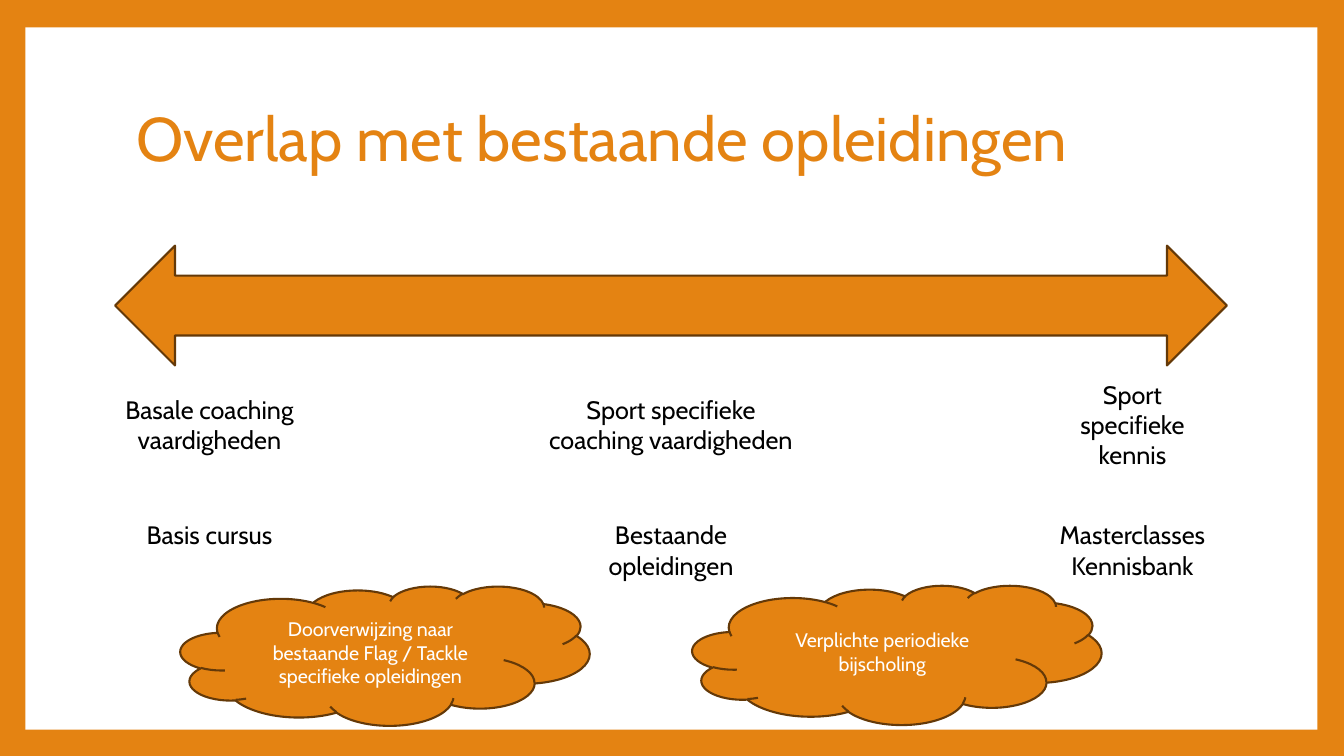
import pptx
import pptx.util
import pptx.dml.color
import pptx.enum.shapes
import pptx.enum.text

Cm = pptx.util.Cm
Pt = pptx.util.Pt
RGBColor = pptx.dml.color.RGBColor
Shape = pptx.enum.shapes.MSO_SHAPE
Align = pptx.enum.text.PP_ALIGN

ORANGE = RGBColor(0xE4, 0x83, 0x12)
BROWN = RGBColor(0x64, 0x39, 0x08)
WHITE = RGBColor(0xFF, 0xFF, 0xFF)
BLACK = RGBColor(0, 0, 0)


def write(shape, text, size, color, align=Align.CENTER):
    frame = shape.text_frame
    frame.word_wrap = True
    frame.vertical_anchor = pptx.enum.text.MSO_ANCHOR.MIDDLE
    frame.text = text
    for par in frame.paragraphs:
        par.alignment = align
        for run in par.runs:
            run.font.name = "Cabin"
            run.font.size = Pt(size)
            run.font.color.rgb = color


def draw(kind, left, top, width, height, fill, line=None):
    """Add a flat preset shape, sized in centimetres, with an optional outline."""
    shape = slide.shapes.add_shape(kind, Cm(left), Cm(top), Cm(width), Cm(height))
    shape.shadow.inherit = False
    shape.fill.solid()
    shape.fill.fore_color.rgb = fill
    if line is None:
        shape.line.fill.background()
    else:
        shape.line.color.rgb = line
        shape.line.width = Pt(1.5)
    return shape


deck = pptx.Presentation()
deck.slide_width = Cm(33.87)
deck.slide_height = Cm(19.05)
slide = deck.slides.add_slide(deck.slide_layouts[6])
slide.background.fill.solid()
slide.background.fill.fore_color.rgb = ORANGE

# Frame, title and arrow
draw(Shape.RECTANGLE, 0.64, 0.69, 32.56, 17.7, WHITE)
title = slide.shapes.add_textbox(Cm(3.18), Cm(1.7), Cm(27.43), Cm(3.76))
write(title, "Overlap met bestaande opleidingen", 44, ORANGE, Align.LEFT)
title.text_frame.paragraphs[0].line_spacing = 0.9
draw(Shape.LEFT_RIGHT_ARROW, 2.9, 6.19, 28.02, 3.02, ORANGE, BROWN)

# Skills and courses in three columns: centre, top, width, height, text
labels = [
    (5.28, 9.8, 4.75, 1.8, "Basale coaching vaardigheden"),
    (16.91, 9.8, 6.73, 1.8, "Sport specifieke coaching vaardigheden"),
    (28.54, 9.8, 4.75, 1.8, "Sport specifieke kennis"),
    (5.28, 12.96, 4.75, 1.02, "Basis cursus"),
    (16.91, 12.96, 4.75, 1.8, "Bestaande opleidingen"),
    (28.54, 12.96, 4.75, 1.8, "Masterclasses\nKennisbank"),
]
for mid, top, width, height, text in labels:
    box = slide.shapes.add_textbox(Cm(mid - width / 2), Cm(top), Cm(width), Cm(height))
    write(box, text, 18, BLACK)

# Clouds between the columns
clouds = [
    (17.45, 14.75, "Verplichte periodieke bijscholing"),
    (4.55, 14.77, "Doorverwijzing naar bestaande Flag / Tackle specifieke opleidingen"),
]
for left, top, text in clouds:
    cloud = draw(Shape.CLOUD, left, top, 10.31, 3.51, ORANGE, BROWN)
    write(cloud, text, 14, WHITE)

deck.save("out.pptx")
